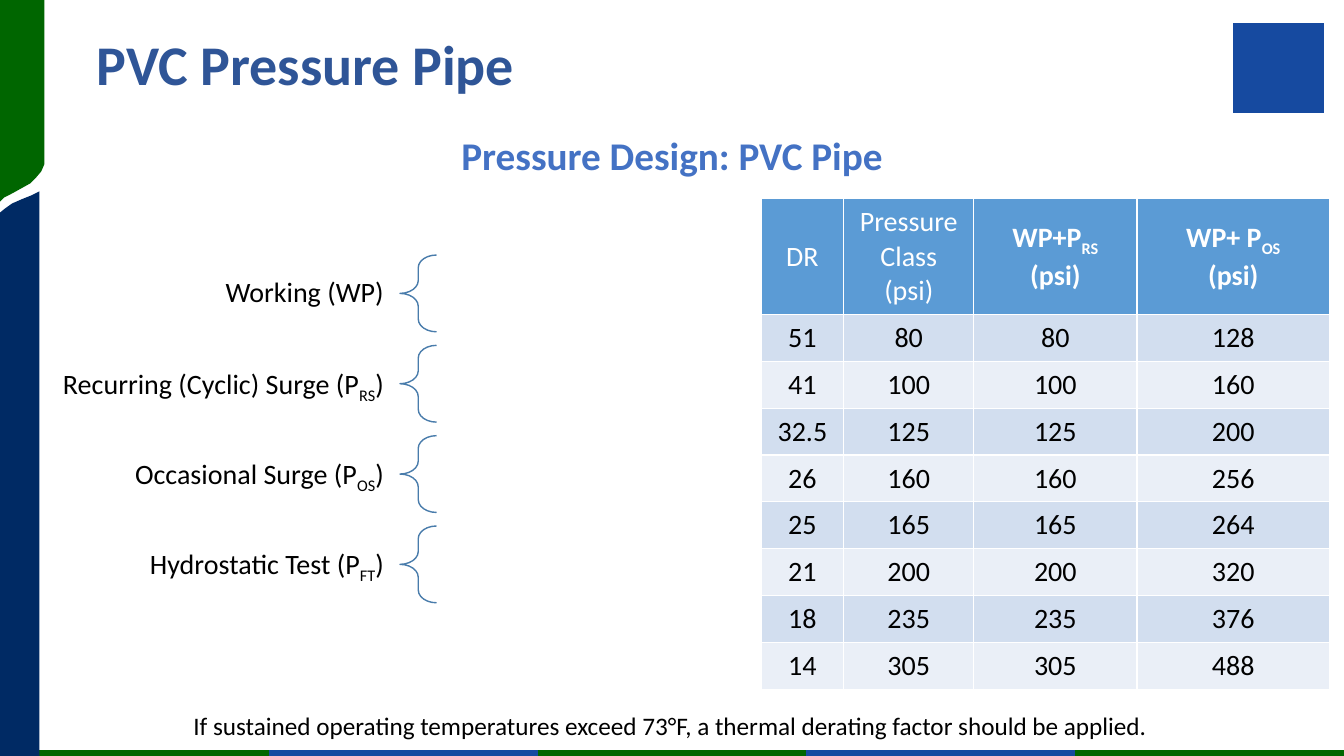
from collections import namedtuple
from itertools import cycle

from lxml.etree import SubElement
from pptx import Presentation
from pptx.dml.color import RGBColor
from pptx.enum.shapes import MSO_CONNECTOR, MSO_SHAPE
from pptx.enum.text import MSO_ANCHOR, PP_ALIGN
from pptx.oxml.ns import qn
from pptx.util import Inches, Pt

WIDTH, HEIGHT = Inches(13.33), Inches(7.5)
GREEN, NAVY, BLUE = "006600", "002A64", "164AA0"
BLACK, WHITE = "000000", "FFFFFF"

Box = namedtuple("Box", "left top width height")

GREEN_OUTLINE = [
    (44, 160), (44, 0), (0, 0), (0, 200), (4, 196), (12, 192), (21, 187), (30, 182),
    (36, 176), (41, 170), (44, 163),
]
NAVY_OUTLINE = [
    (39, 750), (39, 190), (31, 194), (21, 198), (12, 202), (5, 207), (0, 211), (0, 750),
]
PRESSURES = [
    ["Working (WP)"],
    ["Recurring (Cyclic) Surge (P", "RS", ")"],
    ["Occasional Surge (P", "OS", ")"],
    ["Hydrostatic Test (P", "FT", ")"],
]
HEADINGS = [
    [["DR"]],
    [["Pressure Class (psi)"]],
    [["WP+P", "RS"], ["(psi)"]],
    [["WP+ P", "OS"], ["(psi)"]],
]
RATINGS = [
    ("51", "80", "80", "128"),
    ("41", "100", "100", "160"),
    ("32.5", "125", "125", "200"),
    ("26", "160", "160", "256"),
    ("25", "165", "165", "264"),
    ("21", "200", "200", "320"),
    ("18", "235", "235", "376"),
    ("14", "305", "305", "488"),
]


def percent_box(left, top, width, height):
    return Box(
        int(WIDTH * left / 100), int(HEIGHT * top / 100),
        int(WIDTH * width / 100), int(HEIGHT * height / 100),
    )


def part_of(box, left, top, width, height):
    return Box(
        int(box.left + box.width * left), int(box.top + box.height * top),
        int(box.width * width), int(box.height * height),
    )


def color(value):
    return RGBColor.from_string(value)


def paint(shape, fill):
    shape.shadow.inherit = False
    shape.fill.solid()
    shape.fill.fore_color.rgb = color(fill)
    shape.line.fill.background()


def write(para, parts, size, ink, bold=False, align=PP_ALIGN.LEFT):
    for index, text in enumerate(parts):
        span = para.add_run()
        span.text = text
        if index % 2:
            span._r.get_or_add_rPr().set("baseline", "-25000")
    para.alignment = align
    para.font.name = "Calibri"
    para.font.size = Pt(size)
    para.font.bold = bold
    para.font.color.rgb = color(ink)


def set_margins(target, side, edge):
    target.margin_left = target.margin_right = Inches(side)
    target.margin_top = target.margin_bottom = Inches(edge)


def add_text(page, box, parts, size, ink, **style):
    frame = page.shapes.add_textbox(*box).text_frame
    frame.word_wrap = True
    frame.vertical_anchor = MSO_ANCHOR.MIDDLE
    write(frame.paragraphs[0], parts, size, ink, **style)
    return frame


def add_footer_rule(page, box, segments=5):
    step = box.width / segments
    for index, ink in zip(range(segments), cycle([GREEN, BLUE])):
        start, end = int(box.left + step * index), int(box.left + step * (index + 1))
        rule = page.shapes.add_connector(
            MSO_CONNECTOR.STRAIGHT, start, box.top, end, box.top)
        rule.line.width = Pt(3.75)
        rule.line.color.rgb = color(ink)
        SubElement(rule._element.spPr, qn("a:effectLst"))


def add_side_band(page, box):
    for outline, fill in [(GREEN_OUTLINE, GREEN), (NAVY_OUTLINE, NAVY)]:
        builder = page.shapes.build_freeform(*outline[0], scale=box.width / 44)
        builder.add_line_segments(outline[1:], close=True)
        paint(builder.convert_to_shape(box.left, box.top), fill)


def add_emblem(page, box):
    paint(page.shapes.add_shape(MSO_SHAPE.RECTANGLE, *box), BLUE)


def add_pressure_list(page, box):
    brace_share = 0.85
    pitch = 1 / (len(PRESSURES) - 1 + brace_share)
    for index, parts in enumerate(PRESSURES):
        row = part_of(box, 0, index * pitch, 1, brace_share * pitch)
        frame = add_text(page, part_of(row, 0, 0, 0.91, 1), parts, 20, BLACK,
                         align=PP_ALIGN.RIGHT)
        set_margins(frame, 0.16, 0.06)
        frame.paragraphs[0].line_spacing = 0.9
        brace = page.shapes.add_shape(
            MSO_SHAPE.LEFT_BRACE, *part_of(row, 0.91, 0, 0.09, 1))
        brace.adjustments[0] = 0.35
        brace.shadow.inherit = False
        brace.fill.background()
        brace.line.color.rgb = color("497CAB")
        brace.line.width = Pt(1)


def fill_cell(cell, lines, fill, ink, bold=False):
    cell.fill.solid()
    cell.fill.fore_color.rgb = color(fill)
    cell.vertical_anchor = MSO_ANCHOR.MIDDLE
    set_margins(cell, 0.13, 0.06)
    frame = cell.text_frame
    for index, parts in enumerate(lines):
        para = frame.add_paragraph() if index else frame.paragraphs[0]
        write(para, parts, 20, ink, bold, PP_ALIGN.CENTER)


def add_rating_table(page, box):
    column_weights = [0.82, 1.29, 1.62, 1.91]
    row_weights = [2.47] + [1] * len(RATINGS)
    table = page.shapes.add_table(len(row_weights), len(column_weights), *box).table
    table.first_row = table.horz_banding = False
    for column, weight in zip(table.columns, column_weights):
        column.width = int(box.width * weight / sum(column_weights))
    for row, weight in zip(table.rows, row_weights):
        row.height = int(box.height * weight / sum(row_weights))
    for index, lines in enumerate(HEADINGS):
        fill_cell(table.cell(0, index), lines, "5B9BD5", WHITE, bold=index > 1)
    bands = cycle(["D2DEEF", "EAEFF7"])
    for row, (values, fill) in enumerate(zip(RATINGS, bands), 1):
        for column, value in enumerate(values):
            fill_cell(table.cell(row, column), [[value]], fill, BLACK)


def add_pressure_page(deck):
    page = deck.slides.add_slide(deck.slide_layouts[6])
    add_footer_rule(page, percent_box(0, 99.6, 100, 0))
    add_side_band(page, percent_box(0, 0, 3.3, 100))
    add_emblem(page, percent_box(91.75, 3.07, 6.75, 11.87))
    add_text(page, percent_box(16.25, 17.73, 67.5, 5.6), ["Pressure Design: PVC Pipe"],
             28, "4472C4", bold=True, align=PP_ALIGN.CENTER)
    add_pressure_list(page, percent_box(2.25, 33.73, 30.23, 46))
    add_rating_table(page, percent_box(56.63, 26.27, 42.3, 64.93))
    add_text(page, percent_box(13.65, 93.33, 73.5, 5.33),
             ["If sustained operating temperatures exceed 73°F, "
              "a thermal derating factor should be applied."], 18, BLACK)
    add_text(page, percent_box(6.45, 0, 75, 16.67), ["PVC Pressure Pipe"],
             40, "2F5597", bold=True)


def main():
    deck = Presentation()
    deck.slide_width, deck.slide_height = WIDTH, HEIGHT
    add_pressure_page(deck)
    deck.save("out.pptx")


if __name__ == "__main__":
    main()
